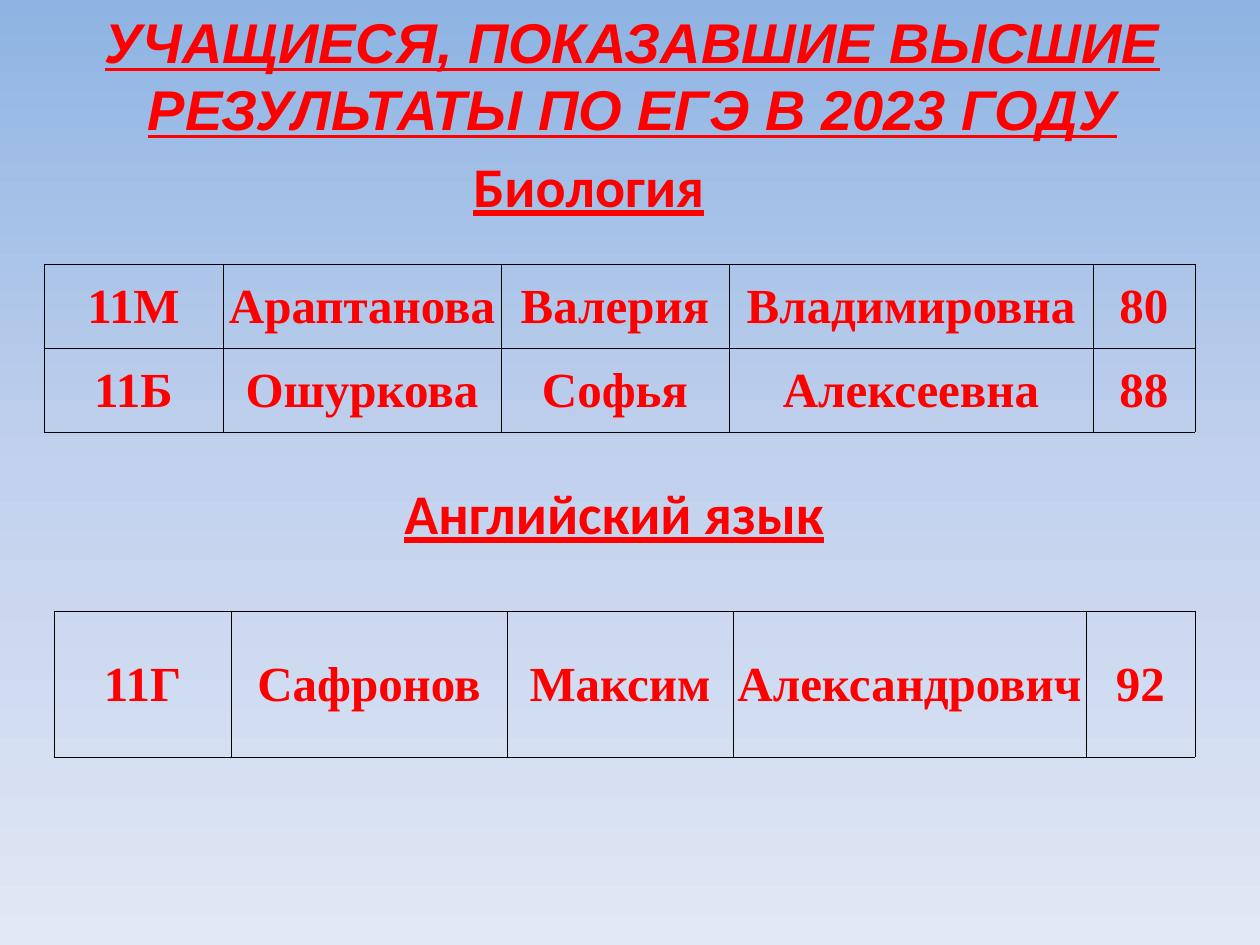
from copy import deepcopy
from dataclasses import dataclass

from lxml import etree
from pptx import Presentation
from pptx.dml.color import RGBColor
from pptx.enum.text import MSO_ANCHOR, MSO_AUTO_SIZE, PP_ALIGN
from pptx.oxml.ns import qn
from pptx.util import Emu, Pt

CENTER, LEFT = PP_ALIGN.CENTER, PP_ALIGN.LEFT
MIDDLE, TOP = MSO_ANCHOR.MIDDLE, MSO_ANCHOR.TOP
FIT_SHAPE = MSO_AUTO_SIZE.SHAPE_TO_FIT_TEXT
PX_PER_INCH = 126
BLANK_LAYOUT = 6


@dataclass(frozen=True)
class Theme:
    text: str = "FF0000"
    border: str = "000000"
    sky: tuple = ((0, "8EB4E3"), (0.5, "C2D1ED"), (1, "E1E8F5"))
    title_font: str = "Arial"
    subject_font: str = "Calibri"
    table_font: str = "Times New Roman"
    heading_size: int = 32
    table_size: int = 28
    border_width: float = 0.5


def px(length):
    return Emu(round(length * 914400 / PX_PER_INCH))


class SlideBuilder:
    def __init__(self, slide, theme):
        self.slide = slide
        self.theme = theme

    def background(self):
        fill = self.slide.background.fill
        fill.gradient()
        fill.gradient_angle = 270
        stop_list = self.slide.background._cSld.find(".//" + qn("a:gsLst"))
        stop_list.insert(1, deepcopy(stop_list[0]))
        for stop, (position, color) in zip(fill.gradient_stops, self.theme.sky):
            stop.position = position
            stop.color.rgb = RGBColor.from_string(color)

    def set_text(self, frame, text, font, size, align, underline=None, italic=None):
        """Fill a text frame, one paragraph per line of text."""
        frame.text = text
        for paragraph in frame.paragraphs:
            paragraph.alignment = align
            for run in paragraph.runs:
                run.font.name = font
                run.font.size = Pt(size)
                run.font.bold = True
                run.font.italic = italic
                run.font.underline = underline
                run.font.color.rgb = RGBColor.from_string(self.theme.text)

    def heading(self, box, text, font, align=LEFT, anchor=TOP, wrap=False, italic=False):
        frame = self.slide.shapes.add_textbox(*map(px, box)).text_frame
        frame.word_wrap = wrap
        frame.auto_size = FIT_SHAPE
        frame.vertical_anchor = anchor
        self.set_text(frame, text, font, self.theme.heading_size, align,
                      underline=True, italic=italic)

    def title(self, box, text):
        self.heading(box, text, self.theme.title_font, CENTER, MIDDLE,
                     wrap=True, italic=True)

    def subject(self, box, text):
        self.heading(box, text, self.theme.subject_font)

    def borders(self, cell):
        properties = cell._tc.get_or_add_tcPr()
        for side in ("a:lnL", "a:lnR", "a:lnT", "a:lnB"):
            line = etree.SubElement(properties, qn(side),
                                    w=str(Pt(self.theme.border_width)))
            solid = etree.SubElement(line, qn("a:solidFill"))
            etree.SubElement(solid, qn("a:srgbClr"), val=self.theme.border)

    def results(self, left, top, column_widths, row_height, students):
        table = self.slide.shapes.add_table(
            len(students), len(column_widths), px(left), px(top),
            px(sum(column_widths)), px(row_height * len(students))).table
        table.first_row = table.horz_banding = False
        for column, width in zip(table.columns, column_widths):
            column.width = px(width)
        for row, student in zip(table.rows, students):
            row.height = px(row_height)
            for cell, value in zip(row.cells, student):
                self.set_text(cell.text_frame, value, self.theme.table_font,
                              self.theme.table_size, CENTER)
                cell.vertical_anchor = MIDDLE
                cell.margin_left = cell.margin_right = cell.margin_top = px(1)
                cell.margin_bottom = 0
                self.borders(cell)
                cell.fill.background()


def main():
    presentation = Presentation()
    presentation.slide_width = px(1260)
    presentation.slide_height = px(945)
    slide = presentation.slides.add_slide(presentation.slide_layouts[BLANK_LAYOUT])
    builder = SlideBuilder(slide, Theme())

    builder.background()
    builder.title((5, 0, 1255, 149),
                  "УЧАЩИЕСЯ, ПОКАЗАВШИЕ ВЫСШИЕ\nРЕЗУЛЬТАТЫ ПО ЕГЭ В 2023 ГОДУ")
    builder.results(44, 264, (179, 278, 228, 364, 102), 84, (
        ("11М", "Араптанова", "Валерия", "Владимировна", "80"),
        ("11Б", "Ошуркова", "Софья", "Алексеевна", "88"),
    ))
    builder.subject((461, 145, 258, 81), "Биология")
    builder.subject((392, 472, 450, 81), "Английский язык")
    builder.results(54, 611, (177, 276, 226, 353, 109), 146, (
        ("11Г", "Сафронов", "Максим", "Александрович", "92"),
    ))

    presentation.save("out.pptx")


if __name__ == "__main__":
    main()
